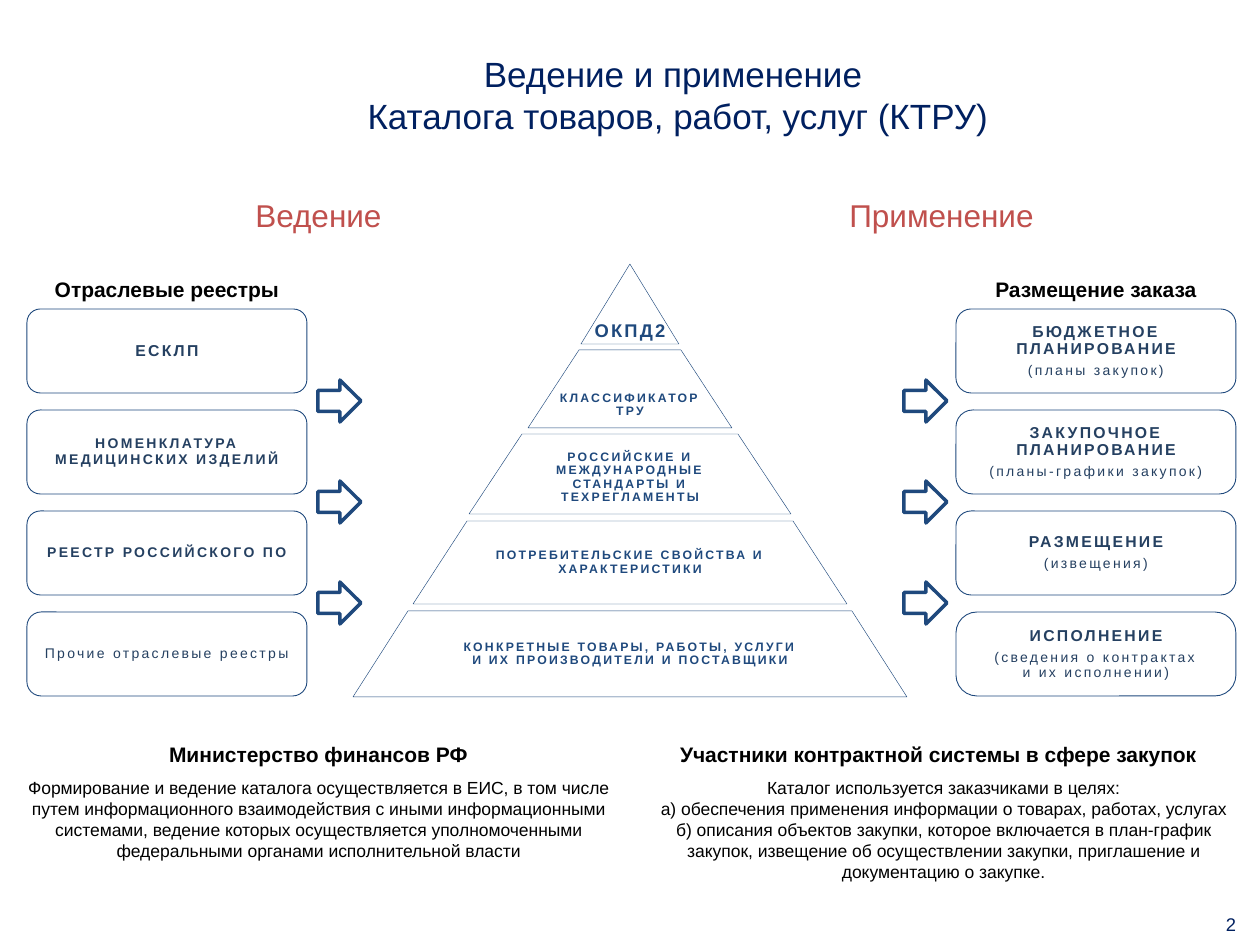
from copy import deepcopy
from dataclasses import dataclass

from pptx import Presentation
from pptx.dml.color import RGBColor
from pptx.enum.shapes import MSO_SHAPE
from pptx.enum.text import MSO_ANCHOR, MSO_AUTO_SIZE, PP_ALIGN
from pptx.oxml.ns import qn
from pptx.util import Inches, Pt

PX = Inches(1) / 126


@dataclass(frozen=True)
class Theme:
    font: str = "Arial"
    navy: str = "002060"
    blue: str = "1F497D"
    dark_blue: str = "254061"
    red: str = "C0504D"
    black: str = "000000"
    white: str = "FFFFFF"
    title: float = 20
    heading: float = 18
    label: float = 12
    peak: float = 10.5
    body: float = 10
    box: float = 9
    small: float = 8
    tier: float = 7


theme = Theme()


def write(shape, text, size=theme.body, color=theme.black, bold=False, tracking=0,
          line_spacing=None, space_after=None, anchor=MSO_ANCHOR.TOP, insets=None, wrap=True):
    frame = shape.text_frame
    frame.word_wrap = wrap
    frame.vertical_anchor = anchor
    if insets:
        left, top = insets
        frame.margin_left = frame.margin_right = round(left * PX)
        frame.margin_top, frame.margin_bottom = round(top * PX), round(3 * PX)
    paragraph = frame.add_paragraph() if frame.text else frame.paragraphs[0]
    paragraph.text = text
    paragraph.alignment = PP_ALIGN.CENTER
    paragraph.line_spacing = line_spacing
    paragraph.space_after = space_after
    for run in paragraph.runs:
        run.font.name = theme.font
        run.font.size = Pt(size)
        run.font.bold = bold
        run.font.color.rgb = RGBColor.from_string(color)
        if tracking:
            run.font._element.set("spc", str(tracking))
    for line_break in paragraph._p.findall(qn("a:br")):
        line_break.insert(0, deepcopy(paragraph.runs[0].font._element))


def decorate(shape, line_width=0, fill=None):
    shape.shadow.inherit = False
    if fill:
        shape.fill.solid()
        shape.fill.fore_color.rgb = RGBColor.from_string(fill)
    else:
        shape.fill.background()
    if line_width:
        shape.line.color.rgb = RGBColor.from_string(theme.blue)
        shape.line.width = Pt(line_width)
    else:
        shape.line.fill.background()


presentation = Presentation()
presentation.slide_width = Inches(10)
presentation.slide_height = Inches(7.5)
slide = presentation.slides.add_slide(presentation.slide_layouts[5])
shapes = slide.shapes

title = shapes.title
title.left, title.top, title.width, title.height = [round(n * PX) for n in (220, 38, 916, 112)]
write(title, "Ведение и применение \nКаталога товаров, работ, услуг (КТРУ)",
      size=theme.title, color=theme.navy, anchor=MSO_ANCHOR.MIDDLE)
title.text_frame.auto_size = MSO_AUTO_SIZE.NONE

for left, heading in ((11, "Ведение"), (634, "Применение")):
    area = [round(n * PX) for n in (left, 185, 615, 704)]
    panel = shapes.add_shape(MSO_SHAPE.ROUNDED_RECTANGLE, *area)
    panel.adjustments[0] = 0.03
    decorate(panel)
    write(panel, heading, size=theme.heading, color=theme.red)

tiers = [
    (264, 344, 0, 49, "ОКПД2", theme.peak, (3, 3), MSO_ANCHOR.BOTTOM),
    (350, 428, 51, 102, "КЛАССИФИКАТОР\nТРУ", theme.tier, (15, 35), MSO_ANCHOR.MIDDLE),
    (434, 514, 108, 161, "РОССИЙСКИЕ И МЕЖДУНАРОДНЫЕ СТАНДАРТЫ И ТЕХРЕГЛАМЕНТЫ",
     theme.tier, (39, 10), MSO_ANCHOR.MIDDLE),
    (521, 604, 163, 217, "ПОТРЕБИТЕЛЬСКИЕ СВОЙСТВА И ХАРАКТЕРИСТИКИ",
     theme.tier, (78, 3), MSO_ANCHOR.MIDDLE),
    (611, 697, 222, 277, "КОНКРЕТНЫЕ ТОВАРЫ, РАБОТЫ, УСЛУГИ\nИ ИХ ПРОИЗВОДИТЕЛИ И ПОСТАВЩИКИ",
     theme.tier, (97, 3), MSO_ANCHOR.MIDDLE),
]
center = 630
for top, bottom, half_top, half_bottom, text, size, insets, anchor in tiers:
    builder = shapes.build_freeform(center - half_bottom, bottom, scale=PX)
    builder.add_line_segments([
        (center - half_top, top), (center + half_top, top), (center + half_bottom, bottom),
    ], close=True)
    tier = builder.convert_to_shape()
    decorate(tier, line_width=0.25)
    write(tier, text, size=size, color=theme.blue, bold=True, tracking=130,
          line_spacing=0.9, space_after=Pt(3), anchor=anchor, insets=insets)

columns = [
    (956, [
        (0.18, [("БЮДЖЕТНОЕ ПЛАНИРОВАНИЕ", theme.box, True), ("(планы закупок)", theme.small, False)]),
        (0.2, [("ЗАКУПОЧНОЕ ПЛАНИРОВАНИЕ", theme.box, True),
               ("(планы-графики закупок)", theme.small, False)]),
        (0.18, [("РАЗМЕЩЕНИЕ", theme.box, True), ("(извещения)", theme.small, False)]),
        (0.25, [("ИСПОЛНЕНИЕ", theme.box, True),
                ("(сведения о контрактах\nи их исполнении)", theme.small, False)]),
    ]),
    (27, [
        (0.16, [("ЕСКЛП", theme.box, True)]),
        (0.16, [("НОМЕНКЛАТУРА МЕДИЦИНСКИХ ИЗДЕЛИЙ", theme.small, True)]),
        (0.16, [("РЕЕСТР РОССИЙСКОГО ПО", theme.small, True)]),
        (0.17, [("Прочие отраслевые реестры", theme.small, False)]),
    ]),
]
first_top, pitch = 309, 101
for left, boxes in columns:
    for row, (rounding, lines) in enumerate(boxes):
        area = [round(n * PX) for n in (left, first_top + row * pitch, 280, 84)]
        box = shapes.add_shape(MSO_SHAPE.ROUNDED_RECTANGLE, *area)
        box.adjustments[0] = rounding
        decorate(box, line_width=0.5)
        for text, size, bold in lines:
            write(box, text, size=size, color=theme.dark_blue, bold=bold, tracking=130,
                  line_spacing=0.9, space_after=Pt(3), anchor=MSO_ANCHOR.MIDDLE, insets=(3, 3))

for left in (318, 904):
    for row in range(3):
        area = [round(n * PX) for n in (left, 380 + row * pitch, 43, 42)]
        arrow = shapes.add_shape(MSO_SHAPE.RIGHT_ARROW, *area)
        decorate(arrow, line_width=2, fill=theme.white)

label = {"size": theme.label, "bold": True}
notes = [
    ((982, 270, 228, 38), ["Размещение заказа"], {**label, "wrap": False}),
    ((41, 270, 252, 38), ["Отраслевые реестры"], {**label, "wrap": False}),
    ((11, 771, 615, 97), [
        "Формирование и ведение каталога осуществляется в ЕИС, в том числе путем "
        "информационного взаимодействия с иными информационными системами, ведение которых "
        "осуществляется уполномоченными федеральными органами исполнительной власти",
    ], {}),
    ((11, 735, 615, 38), ["Министерство финансов РФ"], label),
    ((634, 735, 615, 38), ["Участники контрактной системы в сфере закупок "], label),
    ((636, 771, 615, 118), [
        "Каталог используется заказчиками в целях:",
        "а) обеспечения применения информации о товарах, работах, услугах\n"
        "б) описания объектов закупки, которое включается в план-график закупок, извещение "
        "об осуществлении закупки, приглашение и документацию о закупке.",
    ], {}),
    ((1207, 907, 48, 34), ["2"], {"size": theme.peak, "color": theme.navy}),
]
for area, texts, text_format in notes:
    note = shapes.add_textbox(*[round(n * PX) for n in area])
    for text in texts:
        write(note, text, **text_format)

presentation.save("out.pptx")
